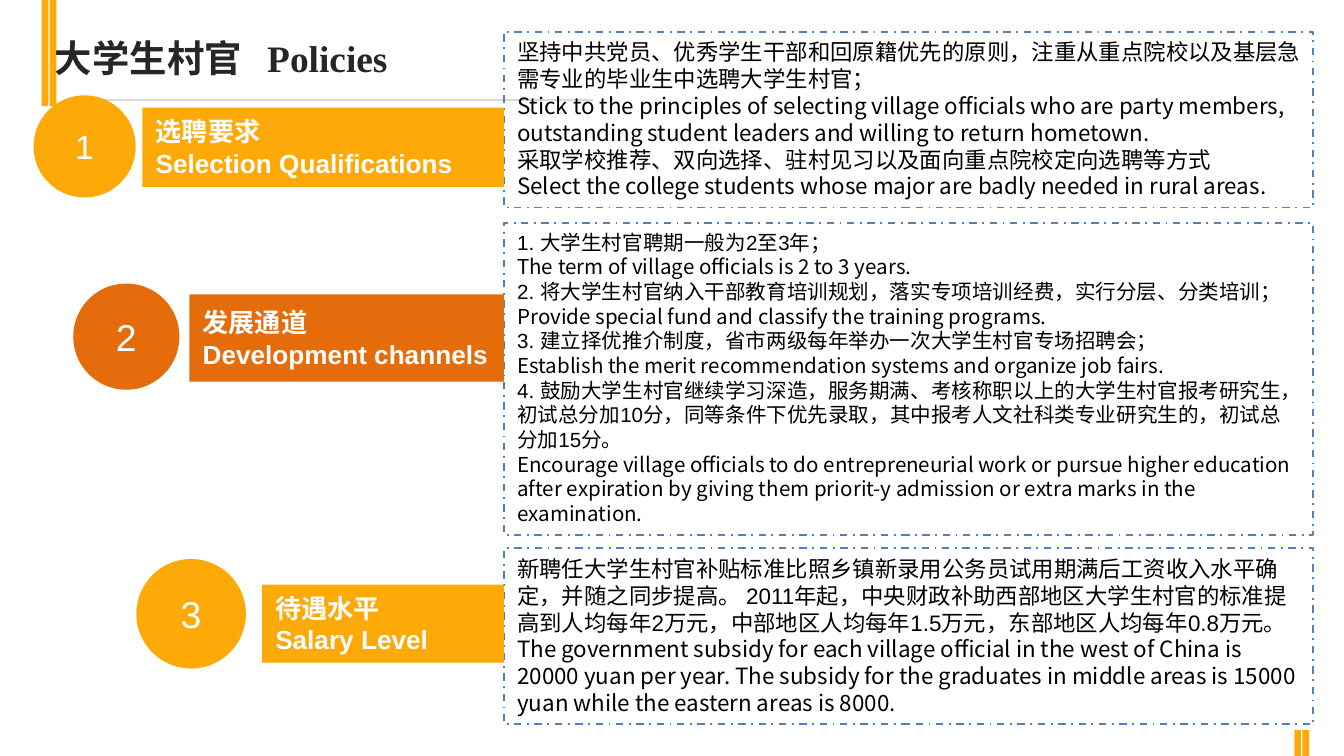
from dataclasses import dataclass
from pptx import Presentation
from pptx.dml.color import RGBColor
from pptx.enum.dml import MSO_LINE
from pptx.enum.shapes import MSO_CONNECTOR, MSO_SHAPE
from pptx.enum.text import MSO_ANCHOR, PP_ALIGN
from pptx.oxml.ns import qn
from pptx.util import Inches, Pt
from lxml.etree import SubElement


@dataclass(frozen=True)
class Theme:
    amber: str = "FDA907"
    orange: str = "E46C0A"
    blue: str = "4F81BD"
    rule: str = "D9D9D9"
    heading: str = "262626"
    black: str = "000000"
    white: str = "FFFFFF"
    sans: str = "Arial"
    narrow: str = "Arial Narrow"
    serif: str = "Times New Roman"
    cjk: str = "Noto Sans CJK SC"
    title: int = 20
    label: int = 14


T = Theme()
COLS, ROWS = 100, 56.25

SECTIONS = [
    dict(
        box=(37.5, 2.35, 60.2, 13.1), fill=T.amber, size=12, inset=0.04,
        circle=(2.5, 4.75, 7.6), number_size=18, label=(10.6, 5.65, 5.9),
        heading=["选聘要求", "Selection Qualifications"],
        body=[
            "坚持中共党员、优秀学生干部和回原籍优先的原则，注重从重点院校以及基层急需专业的毕业生中选聘大学生村官；",
            "Stick to the principles of selecting village officials who are party members, outstanding student leaders and willing to return hometown.",
            "采取学校推荐、双向选择、驻村见习以及面向重点院校定向选聘等方式",
            "Select the college students whose major are badly needed in rural areas.",
        ],
    ),
    dict(
        box=(37.5, 16.6, 60.2, 23.2), fill=T.orange, size=11, inset=0.1,
        circle=(5.45, 4.5, 7.9), number_size=20, label=(14.1, 5.3, 6.5),
        heading=["发展通道", "Development channels"],
        body=[
            "1. 大学生村官聘期一般为2至3年；",
            "The term of village officials is 2 to 3 years.",
            "2. 将大学生村官纳入干部教育培训规划，落实专项培训经费，实行分层、分类培训；",
            "Provide special fund and classify the training programs.",
            "3. 建立择优推介制度，省市两级每年举办一次大学生村官专场招聘会；",
            "Establish the merit recommendation systems and organize job fairs.",
            "4. 鼓励大学生村官继续学习深造，服务期满、考核称职以上的大学生村官报考研究生，初试总分加10分，同等条件下优先录取，其中报考人文社科类专业研究生的，初试总分加15分。",
            "Encourage village officials to do entrepreneurial work or pursue higher education after expiration by giving them priorit-y admission or extra marks in the examination.",
        ],
    ),
    dict(
        box=(37.5, 40.8, 60.2, 13.1), fill=T.amber, size=12, inset=0.1,
        circle=(10.15, 0.8, 8.15), number_size=20, label=(19.5, 2.7, 5.8),
        heading=["待遇水平", "Salary Level"],
        body=[
            "新聘任大学生村官补贴标准比照乡镇新录用公务员试用期满后工资收入水平确定，并随之同步提高。 2011年起，中央财政补助西部地区大学生村官的标准提高到人均每年2万元，中部地区人均每年1.5万元，东部地区人均每年0.8万元。",
            "The government subsidy for each village official in the west of China is 20000 yuan per year. The subsidy for the graduates in middle areas is 15000 yuan while the eastern areas is 8000.",
        ],
    ),
]


def grid(*cells):
    return [Inches(c / 10) for c in cells]


def style(font, name, size, color, bold=False):
    font.name, font.size, font.bold = name, Pt(size), bold
    font.color.rgb = RGBColor.from_string(color)


def add_block(s, kind, box, fill=None):
    sp = s.shapes.add_shape(kind, *grid(*box))
    sp.shadow.inherit = False
    sp.line.fill.background()
    if fill:
        sp.fill.solid()
        sp.fill.fore_color.rgb = RGBColor.from_string(fill)
    else:
        sp.fill.background()
    return sp


def write(sp, lines, fonts, size, color, bold=False, align=PP_ALIGN.LEFT, anchor=MSO_ANCHOR.MIDDLE):
    tf = sp.text_frame
    tf.word_wrap = True
    tf.vertical_anchor = anchor
    tf.text = "\n".join(lines)
    for i, p in enumerate(tf.paragraphs):
        p.alignment = align
        style(p.font, fonts[i % len(fonts)], size, color, bold)


def add_bars(s, box):
    left, top, width, height = box
    bar = 0.5
    for x in (left, left + width - bar):
        add_block(s, MSO_SHAPE.RECTANGLE, (x, top, bar, height), T.amber)


def add_header(s, box):
    left, top, width, height = box
    rule_y = top + height
    rule = s.shapes.add_connector(MSO_CONNECTOR.STRAIGHT, *grid(left + 2.6, rule_y, left + width, rule_y))
    rule.line.color.rgb = RGBColor.from_string(T.rule)
    rule.line.width = Pt(0.75)
    SubElement(rule._element.spPr, qn("a:effectLst"))

    tb = s.shapes.add_textbox(*grid(left, top, 37.5, 4.4))
    tf = tb.text_frame
    tf.word_wrap = True
    p = tf.paragraphs[0]
    for text, name in (("大学生村官", T.narrow), ("\tPolicies", T.serif)):
        r = p.add_run()
        r.text = text
        style(r.font, name, T.title, T.heading, True)
    tabs = SubElement(p._p.get_or_add_pPr(), qn("a:tabLst"))
    SubElement(tabs, qn("a:tab"), pos=str(Inches(1.58)), algn="l")


def add_section(s, number, box, fill, size, inset, circle, number_size, label, heading, body):
    left, top, width, height = box
    panel = add_block(s, MSO_SHAPE.RECTANGLE, box)
    panel.line.color.rgb = RGBColor.from_string(T.blue)
    panel.line.width = Pt(1)
    panel.line.dash_style = MSO_LINE.DASH_DOT
    panel.text_frame.margin_right = Inches(inset)
    write(panel, body, (T.sans, T.cjk), size, T.black, anchor=MSO_ANCHOR.TOP)

    x, dy, diameter = circle
    badge = add_block(s, MSO_SHAPE.OVAL, (x, top + dy, diameter, diameter), fill)
    write(badge, [str(number)], (T.sans,), number_size, T.white, align=PP_ALIGN.CENTER)

    x, dy, label_height = label
    tag = add_block(s, MSO_SHAPE.RECTANGLE, (x, top + dy, left - x, label_height), fill)
    write(tag, heading, (T.sans,), T.label, T.white, bold=True)


def main():
    prs = Presentation()
    prs.slide_width, prs.slide_height = grid(COLS, ROWS)
    s = prs.slides.add_slide(prs.slide_layouts[6])
    add_bars(s, (3.1, 0, 1.1, 7.9))
    add_bars(s, (COLS - 3.7, ROWS - 1.95, 1.1, 1.95))
    add_header(s, (3.1, 2.1, 41, 5.35))
    for number, section in enumerate(SECTIONS, 1):
        add_section(s, number, **section)
    prs.save("out.pptx")


if __name__ == "__main__":
    main()
